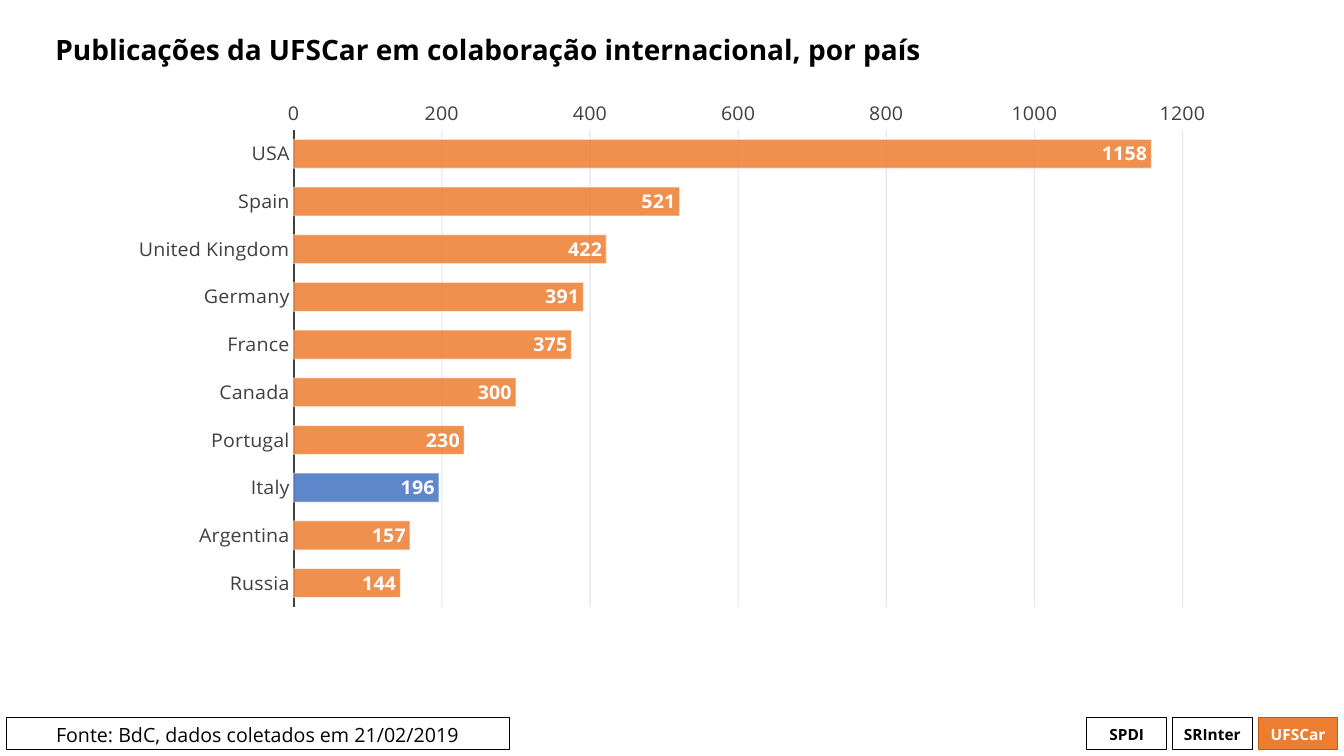
from lxml import etree
from pptx import Presentation
from pptx.chart.data import CategoryChartData
from pptx.dml.color import RGBColor
from pptx.enum.chart import XL_AXIS_CROSSES as Crosses, XL_CHART_TYPE as ChartType
from pptx.enum.chart import XL_LABEL_POSITION as LabelPos, XL_TICK_MARK as Tick
from pptx.enum.shapes import MSO_SHAPE as Shape
from pptx.enum.text import MSO_ANCHOR as Anchor, PP_ALIGN as Align
from pptx.oxml import parse_xml
from pptx.oxml.ns import nsdecls, qn
from pptx.util import Inches, Pt

FONT = "Open Sans"
COLORS = {
    "black": "000000", "white": "FFFFFF", "text": "404040", "grid": "0D0D0D",
    "orange": "ED7D31", "dark_orange": "C55A11", "blue": "4472C4",
}
PUBLICATIONS = {
    "USA": 1158, "Spain": 521, "United Kingdom": 422, "Germany": 391, "France": 375,
    "Canada": 300, "Portugal": 230, "Italy": 196, "Argentina": 157, "Russia": 144,
}
HIGHLIGHT = "Italy"


def rgb(name):
    return RGBColor.from_string(COLORS[name])


def set_font(font, size, color, bold=False):
    font.name, font.size, font.bold = FONT, Pt(size), bold
    font.color.rgb = rgb(color)


def paint(fmt, color, opacity=100):
    """Give a fill a solid colour with the given opacity in percent."""
    fmt.solid()
    fmt.fore_color.rgb = rgb(color)
    if opacity < 100:
        clr = fmt._xPr.find(qn("a:solidFill"))[0]
        etree.SubElement(clr, qn("a:alpha"), val=str(opacity * 1000))


def stroke(line, color, width, opacity=100):
    line.width = Pt(width)
    paint(line.fill, color, opacity)


def add_title(s, text, x, y, w, h):
    tf = s.shapes.add_textbox(Inches(x), Inches(y), Inches(w), Inches(h)).text_frame
    tf.word_wrap = True
    tf.vertical_anchor = Anchor.MIDDLE
    p = tf.paragraphs[0]
    p.text = text
    p.line_spacing = 0.9
    set_font(p.font, 20, "black", bold=True)


def add_box(s, text, x, y, w, h, size, color="black", fill=None, line="black", bold=False):
    sp = s.shapes.add_shape(Shape.RECTANGLE, Inches(x), Inches(y), Inches(w), Inches(h))
    sp.shadow.inherit = False
    if fill:
        paint(sp.fill, fill)
    else:
        sp.fill.background()
    stroke(sp.line, line, 0.75)
    p = sp.text_frame.paragraphs[0]
    p.text = text
    p.alignment = Align.CENTER
    set_font(p.font, size, color, bold)
    return sp


def add_footer(s, x, y, w, h):
    """Source note at the left end, badges at the right end."""
    source = add_box(s, "Fonte: BdC, dados coletados em 21/02/2019", x, y, 4.99, h, 14)
    source.text_frame.vertical_anchor = Anchor.TOP
    badges = [("SPDI", {}), ("SRInter", {}),
              ("UFSCar", dict(color="white", fill="orange", line="dark_orange"))]
    badge_w, pitch = 0.79, 0.85
    first = x + w - badge_w - pitch * (len(badges) - 1)
    for i, (name, style) in enumerate(badges):
        badge = add_box(s, name, first + i * pitch, y, badge_w, h, 11, bold=True, **style)
        badge.text_frame.margin_left = badge.text_frame.margin_right = 0


def place_plot(chart, x, y, w, h):
    """Fix the inner plot area, in fractions of the chart."""
    area = chart._chartSpace.chart.plotArea
    for old in area.findall(qn("c:layout")):
        area.remove(old)
    values = "".join(f'<c:{k} val="{v}"/>' for k, v in zip("xywh", (x, y, w, h)))
    area.insert(0, parse_xml(
        f'<c:layout {nsdecls("c")}><c:manualLayout><c:layoutTarget val="inner"/>'
        f'<c:xMode val="edge"/><c:yMode val="edge"/>{values}</c:manualLayout></c:layout>'))


def style_axes(chart):
    countries, counts = chart.category_axis, chart.value_axis
    for axis in (countries, counts):
        axis.major_tick_mark = axis.minor_tick_mark = Tick.NONE
        set_font(axis.tick_labels.font, 14, "text")
    countries.reverse_order = True
    countries.crosses = Crosses.MAXIMUM
    countries.has_major_gridlines = False
    stroke(countries.format.line, "text", 1.5)
    counts.minimum_scale, counts.maximum_scale, counts.major_unit = 0, 1200, 200
    counts.format.line.fill.background()
    stroke(counts.major_gridlines.format.line, "grid", 0.75, 10)


def style_bars(chart):
    plot = chart.plots[0]
    plot.gap_width = 65
    plot.vary_by_categories = False
    series = plot.series[0]
    series.invert_if_negative = False
    italy = series.points[list(PUBLICATIONS).index(HIGHLIGHT)]
    for part, color in ((series, "orange"), (italy, "blue")):
        paint(part.format.fill, color, 85)
        stroke(part.format.line, "white", 0.75, 50)
    labels = series.data_labels
    labels.show_value = True
    labels.position = LabelPos.INSIDE_END
    set_font(labels.font, 14, "white", bold=True)


def add_country_chart(s, x, y, w, h):
    data = CategoryChartData()
    data.categories = list(PUBLICATIONS)
    data.add_series("Publicações", list(PUBLICATIONS.values()))
    chart = s.shapes.add_chart(ChartType.BAR_CLUSTERED, Inches(x), Inches(y),
                               Inches(w), Inches(h), data).chart
    chart.has_legend = chart.has_title = False
    set_font(chart.font, 14, "black")
    place_plot(chart, 0.16, 0.02, 0.8, 0.89)
    style_axes(chart)
    style_bars(chart)


def main():
    prs = Presentation()
    prs.slide_width, prs.slide_height = Inches(13.33), Inches(7.5)
    s = prs.slides.add_slide(prs.slide_layouts[6])
    add_footer(s, 0.06, 7.12, 13.21, 0.32)
    add_title(s, "Publicações da UFSCar em colaboração internacional, por país",
              0.45, 0.06, 12.41, 0.91)
    add_country_chart(s, 1.15, 0.99, 11.02, 5.51)
    prs.save("out.pptx")


if __name__ == "__main__":
    main()
